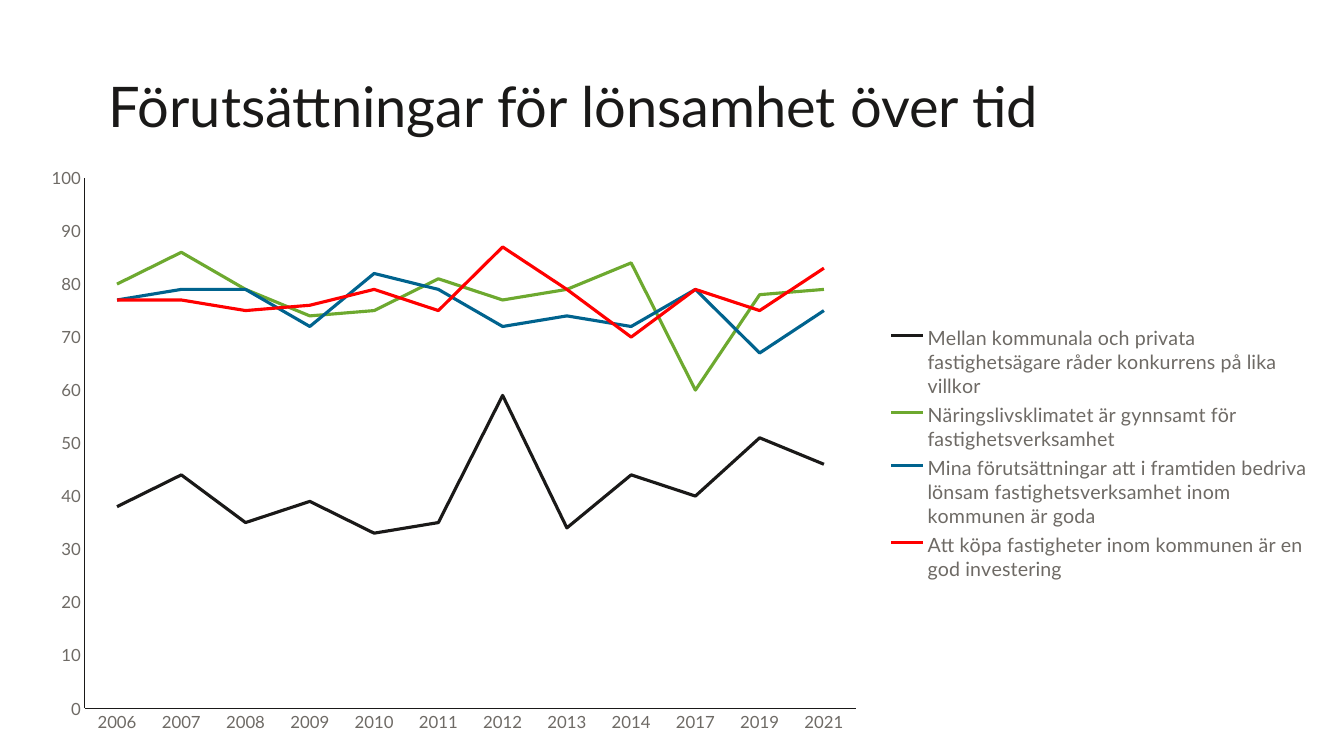
import pptx
import pptx.util
import pptx.chart.data
import pptx.dml.color
import pptx.enum.chart
import pptx.enum.text
import pptx.oxml
from pptx.util import Cm, Pt

INK, GREY = "1A1918", "6E6A65"


def paint(font, size, color):
    font.name = "Lato"
    font.size = Pt(size)
    font.color.rgb = pptx.dml.color.RGBColor.from_string(color)


def place(x, y, w, h, inner=""):
    ns = "http://schemas.openxmlformats.org/drawingml/2006/chart"
    return pptx.oxml.parse_xml(
        f'<c:layout xmlns:c="{ns}"><c:manualLayout>{inner}'
        '<c:xMode val="edge"/><c:yMode val="edge"/>'
        f'<c:x val="{x}"/><c:y val="{y}"/><c:w val="{w}"/><c:h val="{h}"/>'
        '</c:manualLayout></c:layout>')


deck = pptx.Presentation()
deck.slide_width, deck.slide_height = Cm(33.87), Cm(19.05)
slide = deck.slides.add_slide(deck.slide_layouts[6])

# Title
title = slide.shapes.add_textbox(Cm(2.74), Cm(0.53), Cm(29.21), Cm(2.95))
frame = title.text_frame
frame.word_wrap = True
frame.vertical_anchor = pptx.enum.text.MSO_ANCHOR.BOTTOM
frame.margin_left = frame.margin_right = 0
frame.margin_top = frame.margin_bottom = 0
frame.text = "Förutsättningar för lönsamhet över tid"
frame.paragraphs[0].line_spacing = 0.8
paint(frame.paragraphs[0].runs[0].font, 40, INK)

# Chart data
lines = [
    ("Mellan kommunala och privata fastighetsägare råder konkurrens på lika villkor",
     INK, (38, 44, 35, 39, 33, 35, 59, 34, 44, 40, 51, 46)),
    ("Näringslivsklimatet är gynnsamt för fastighetsverksamhet",
     "6DA92F", (80, 86, 79, 74, 75, 81, 77, 79, 84, 60, 78, 79)),
    ("Mina förutsättningar att i framtiden bedriva lönsam "
     "fastighetsverksamhet inom kommunen är goda",
     "00638E", (77, 79, 79, 72, 82, 79, 72, 74, 72, 79, 67, 75)),
    ("Att köpa fastigheter inom kommunen är en god investering",
     "FF0000", (77, 77, 75, 76, 79, 75, 87, 79, 70, 79, 75, 83)),
]
data = pptx.chart.data.CategoryChartData(number_format="0")
data.categories = ["2006", "2007", "2008", "2009", "2010", "2011",
                   "2012", "2013", "2014", "2017", "2019", "2021"]
for name, color, vals in lines:
    data.add_series(name, vals)

# Line chart
chart = slide.shapes.add_chart(
    pptx.enum.chart.XL_CHART_TYPE.LINE,
    Cm(0.64), Cm(3.94), Cm(32.61), Cm(14.81), data).chart
paint(chart.font, 10, INK)
chart.has_title = False
plot = chart.plots[0]
plot.vary_by_categories = False
for series, (name, color, vals) in zip(plot.series, lines):
    series.smooth = False
    series.marker.style = pptx.enum.chart.XL_MARKER_STYLE.NONE
    series.format.line.width = Pt(2.25)
    series.format.line.color.rgb = pptx.dml.color.RGBColor.from_string(color)

# Axes
for axis in (chart.category_axis, chart.value_axis):
    axis.has_major_gridlines = False
    axis.major_tick_mark = pptx.enum.chart.XL_TICK_MARK.NONE
    axis.minor_tick_mark = pptx.enum.chart.XL_TICK_MARK.NONE
    axis.format.line.width = Pt(0.75)
    axis.format.line.color.rgb = pptx.dml.color.RGBColor.from_string(INK)
    paint(axis.tick_labels.font, 12, GREY)
scale = chart.value_axis
scale.minimum_scale, scale.maximum_scale, scale.major_unit = 0, 100, 10
scale.tick_labels.number_format = "0"
scale.tick_labels.number_format_is_linked = False

# Legend
chart.has_legend = True
legend = chart.legend
legend.position = pptx.enum.chart.XL_LEGEND_POSITION.RIGHT
legend.include_in_layout = False
paint(legend.font, 14, GREY)

# Fixed places for plot and legend
area = chart.element.find(".//{*}plotArea")
for old in area.findall("{*}layout"):
    area.remove(old)
area.insert(0, place(0.046, 0.037, 0.596, 0.902,
                     '<c:layoutTarget val="inner"/>'))
key = chart.element.find(".//{*}legend")
for old in key.findall("{*}layout"):
    key.remove(old)
key.find("{*}legendPos").addnext(place(0.66, 0.28, 0.34, 0.45))

deck.save("out.pptx")
